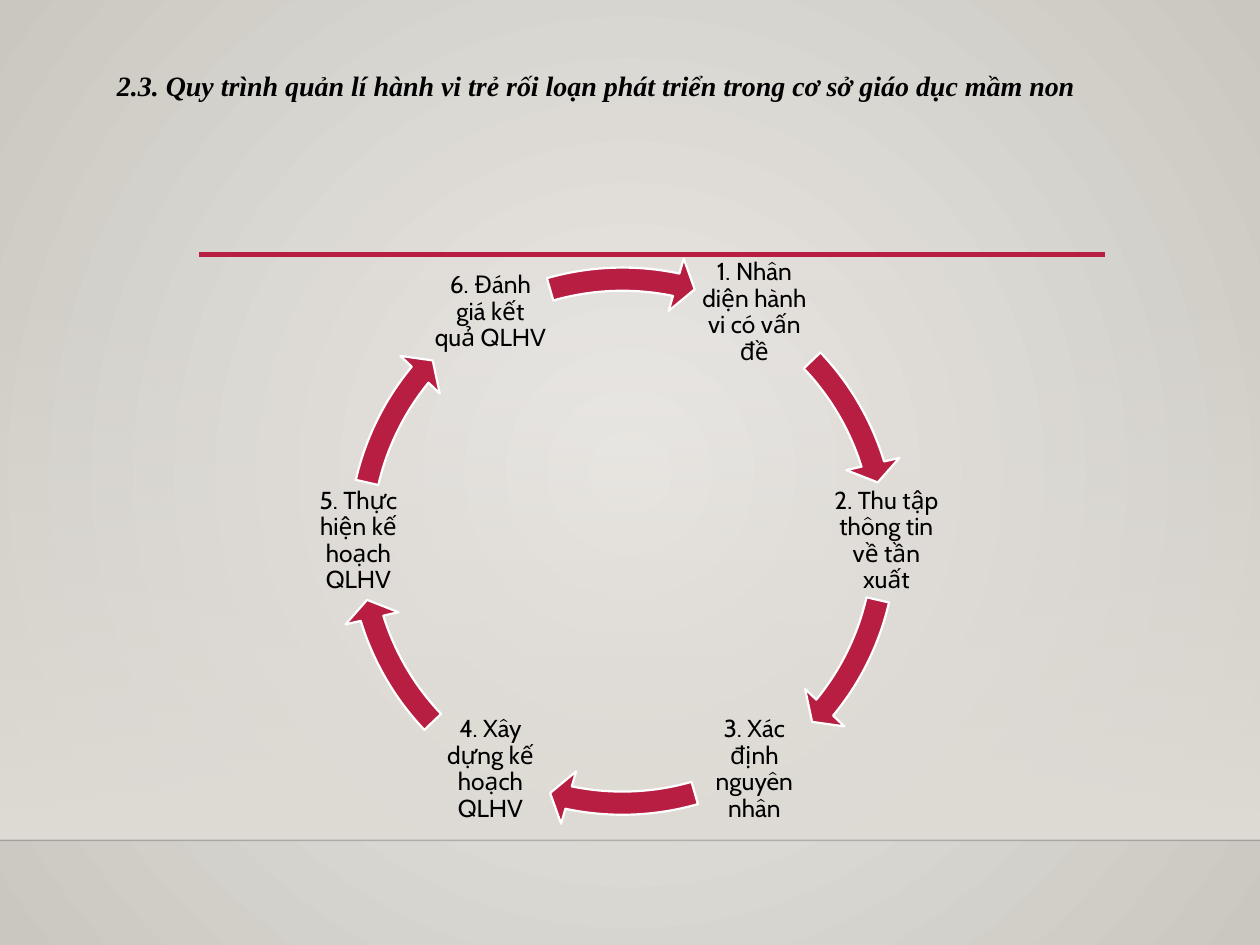
from math import cos, radians, sin

from lxml.etree import SubElement as Sub
from pptx import Presentation
from pptx.dml.color import RGBColor as Rgb
from pptx.enum.shapes import MSO_CONNECTOR as Conn, MSO_SHAPE as Form
from pptx.enum.text import MSO_ANCHOR as Anchor, MSO_AUTO_SIZE as Auto, PP_ALIGN as Align
from pptx.oxml import parse_xml
from pptx.oxml.ns import nsdecls, qn
from pptx.util import Inches, Pt

INK = {"red": "B71E42", "text": "000000", "white": "FFFFFF", "rule": "000001",
       "glow": "ECEAE7", "edge": "CAC7C1", "floor": "DFDBD5"}
COLS, ROWS = 100, 75
STEPS = ["1. Nhân diện hành vi có vấn đề", "2. Thu tập thông tin về tần xuất",
         "3. Xác định nguyên nhân", "4. Xây dựng kế hoạch QLHV",
         "5. Thực hiện kế hoạch QLHV", "6. Đánh giá kết quả QLHV"]
TURNS = [(97.73, 81.83), (23.67, 7.77), (61.11, 44.39)]
HALF = 108


class Deck:
    """Holds the style and the current slide, on a grid of 100 by 75 cells."""

    def __init__(self):
        self.show = Presentation()
        self.show.slide_width, self.show.slide_height = Inches(10), Inches(7.5)
        self.cell = self.show.slide_width / COLS
        self.slide = self.show.slides.add_slide(self.show.slide_layouts[6])
        self.shapes = self.slide.shapes

    def grid(self, *cells):
        return [round(n * self.cell) for n in cells]

    def fade(self, host, stops, way):
        marks = "".join(
            f'<a:gs pos="{pos}"><a:srgbClr val="{INK[ink]}">'
            f'<a:alpha val="{alpha}"/></a:srgbClr></a:gs>' for pos, ink, alpha in stops)
        old = host.find(".//" + qn("a:solidFill"))
        old.getparent().replace(old, parse_xml(
            f'<a:gradFill {nsdecls("a")}><a:gsLst>{marks}</a:gsLst>{way}</a:gradFill>'))

    def back(self):
        self.slide.background.fill.solid()
        self.slide.background.fill.fore_color.rgb = Rgb.from_string(INK["edge"])
        self.fade(self.slide.element, [(0, "glow", 100000), (100000, "edge", 100000)],
                  '<a:path path="circle"><a:fillToRect l="50000" t="50000" '
                  'r="50000" b="50000"/></a:path>')

    def form(self, kind, box, ink):
        shape = self.shapes.add_shape(kind, *self.grid(*box))
        shape.shadow.inherit = False
        shape.fill.solid()
        shape.fill.fore_color.rgb = Rgb.from_string(INK[ink])
        return shape

    def floor(self, box):
        shape = self.form(Form.RECTANGLE, box, "floor")
        shape.line.fill.background()
        self.fade(shape.element, [(0, "floor", 0), (100000, "floor", 100000)],
                  '<a:lin ang="5400000" scaled="0"/>')

    def rule(self, left, right, row, ink, width, alpha=100):
        line = self.shapes.add_connector(Conn.STRAIGHT, *self.grid(left, row, right, row))
        line.line.color.rgb = Rgb.from_string(INK[ink])
        line.line.width = Pt(width)
        color = line.element.find(".//" + qn("a:ln")).find(".//" + qn("a:srgbClr"))
        Sub(color, qn("a:alpha"), val=str(alpha * 1000))
        Sub(line.element.spPr, qn("a:effectLst"))

    def text(self, box, words, font, size, align, bold=None):
        frame = self.shapes.add_textbox(*self.grid(*box)).text_frame
        frame.word_wrap = True
        frame.text = words
        para = frame.paragraphs[0]
        para.alignment = align
        face = para.runs[0].font
        face.name, face.size, face.bold, face.italic = font, Pt(size), bold, bold
        face.color.rgb = Rgb.from_string(INK["text"])
        return frame, para

    def title(self, box, words):
        frame, para = self.text(box, words, "Times New Roman", 16, Align.JUSTIFY, True)
        frame.auto_size = Auto.SHAPE_TO_FIT_TEXT
        para.level = 1
        para.line_spacing = Pt(18)
        props = para._p.get_or_add_pPr()
        props.set("marL", str(Inches(0.5)))
        props.set("indent", "0")

    def label(self, box, words):
        frame, para = self.text(box, words, "Cabin", 14, Align.CENTER)
        frame.vertical_anchor = Anchor.MIDDLE
        frame.margin_left = frame.margin_right = Inches(0.02)
        frame.margin_top = frame.margin_bottom = Inches(0.02)
        para.line_spacing = 0.9
        after = Sub(para._p.get_or_add_pPr(), qn("a:spcAft"))
        Sub(after, qn("a:spcPct"), val="35000")

    def arrow(self, box, end, start):
        shape = self.form(Form.CIRCULAR_ARROW, box, "red")
        shape.line.color.rgb = Rgb.from_string(INK["white"])
        shape.line.width = Pt(1.25)
        for slot, value in enumerate((0.04, 2.5, end, start, 0.047)):
            shape.adjustments[slot] = value

    def cycle(self, mid, row, reach, side, ring):
        for step, words in enumerate(STEPS):
            turn = radians(60 * step - 60)
            left = mid + reach * cos(turn) - side / 2
            top = row + reach * sin(turn) - side / 2
            self.label((left, top, side, side), words)
            shift = HALF if step in (0, 4, 5) else 0
            end, start = (n + shift for n in TURNS[step % 3])
            self.arrow((mid - ring / 2, row - ring / 2, ring, ring), end, start)


def main():
    deck = Deck()
    deck.back()
    deck.floor((0, 22, COLS, 44.6))
    deck.rule(0, COLS, 66.7, "rule", 1, 20)
    deck.rule(15.8, 87.7, 20.2, "red", 2.5)
    deck.title((3.3, 5.1, 92.6, 3.5), "2.3. Quy trình quản lí hành vi trẻ rối loạn "
               "phát triển trong cơ sở giáo dục mầm non")
    deck.cycle(49.4, 42.95, 20.95, 9.4, 45.9)
    deck.show.save("out.pptx")


if __name__ == "__main__":
    main()
